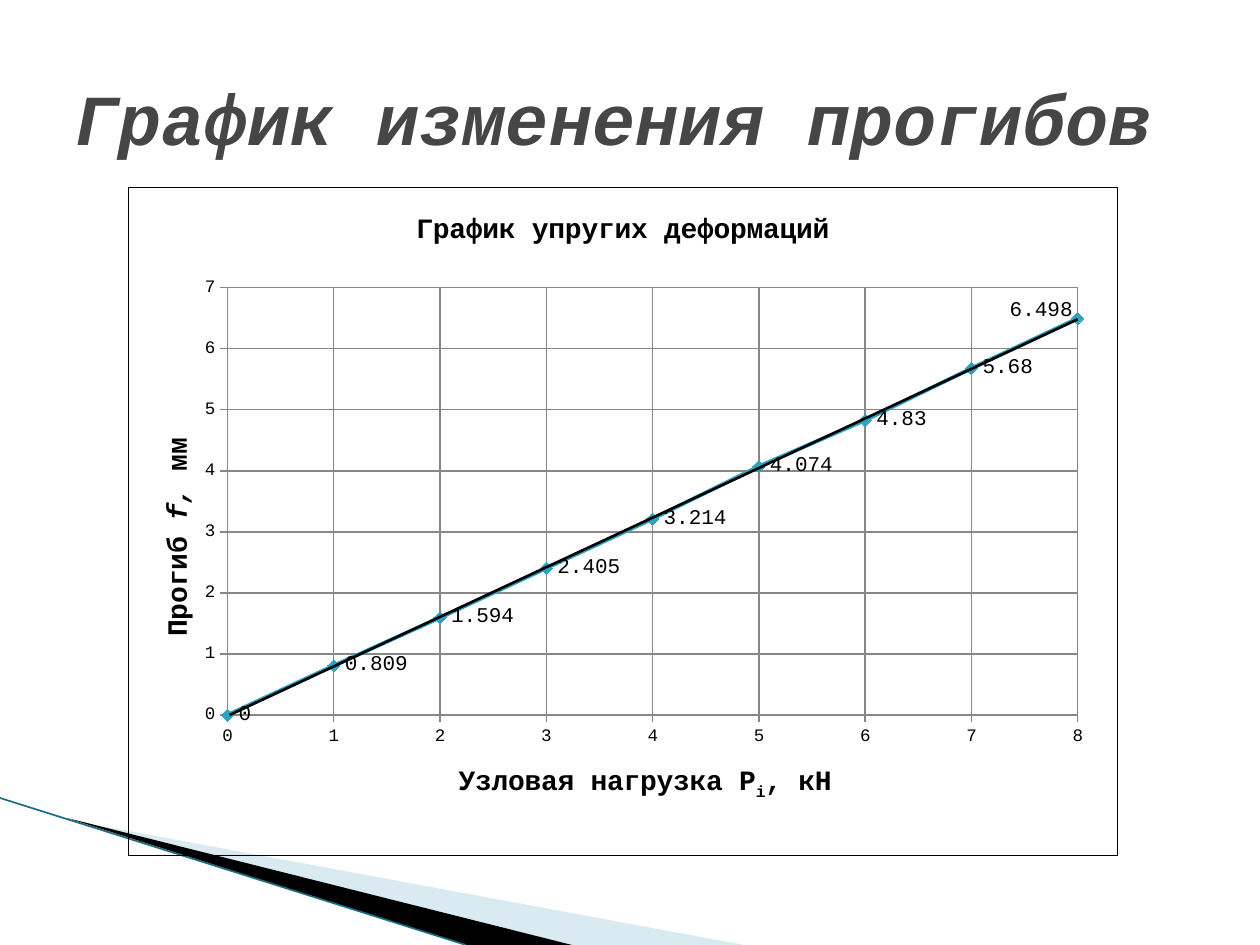
import pptx
import pptx.chart.data
import pptx.chart.datalabel
import pptx.dml.color
import pptx.enum.chart
import pptx.enum.text
import pptx.oxml
import pptx.oxml.ns
import pptx.util

PX = 914400 / 126
FONT = "Courier New"
DEFLECTIONS = [0, 0.809, 1.594, 2.405, 3.214, 4.074, 4.83, 5.68, 6.498]
qn = pptx.oxml.ns.qn


def px(n):
    return pptx.util.Emu(round(n * PX))


def rgb(code):
    return pptx.dml.color.RGBColor.from_string(code)


def xml(text):
    """Parse a chart element written with the c: and a: prefixes."""
    head, rest = text.split(">", 1)
    slash = "/" if head.endswith("/") else ""
    names = pptx.oxml.ns.nsdecls("c", "a")
    return pptx.oxml.parse_xml(f"{head.rstrip('/')} {names}{slash}>{rest}")


def layout(x, y, w=None, h=None, edge=True):
    parts = '<c:layoutTarget val="inner"/>' if w else ""
    if edge:
        parts += '<c:xMode val="edge"/><c:yMode val="edge"/>'
    for tag, value in zip("xywh", (x, y, w, h)):
        if value is not None:
            parts += f'<c:{tag} val="{value}"/>'
    return xml(f"<c:layout><c:manualLayout>{parts}</c:manualLayout></c:layout>")


def set_font(font, size, color="000000", bold=False, italic=False):
    font.name = FONT
    font.size = pptx.util.Pt(size)
    font.bold = bold
    font.italic = italic
    font.color.rgb = rgb(color)


def add_wedge(s, points, color, opacity=100):
    builder = s.shapes.build_freeform(*points[0], scale=PX)
    builder.add_line_segments(points[1:], close=True)
    sp = builder.convert_to_shape()
    sp.shadow.inherit = False
    sp.fill.solid()
    sp.fill.fore_color.rgb = rgb(color)
    sp.line.fill.background()
    if opacity < 100:
        clr = sp._element.spPr.find(".//" + qn("a:srgbClr"))
        clr.append(xml(f'<a:alpha val="{opacity * 1000}"/>'))


def add_corner(s, x, y, w, h):
    """Swoosh in the bottom left corner."""
    bottom = y + h
    add_wedge(s, [(x + 69, y + 22), (x + 744, bottom), (x + 572, bottom)],
              "A0CBDC", 40)
    add_wedge(s, [(x + 67, y + 20), (x + 572, bottom), (x + 466, bottom)],
              "000000")
    line = s.shapes.add_connector(1, px(x), px(y), px(x + w), px(bottom))
    line.line.color.rgb = rgb("1B6E82")
    line.line.width = pptx.util.Pt(0.95)
    line._element.spPr.append(xml("<a:effectLst/>"))


def add_title(s, x, y, w, h):
    sp = s.shapes.title
    sp.left, sp.top, sp.width, sp.height = map(px, (x, y, w, h))
    tf = sp.text_frame
    tf.text = "График изменения прогибов"
    tf.vertical_anchor = pptx.enum.text.MSO_ANCHOR.MIDDLE
    p = tf.paragraphs[0]
    p.alignment = pptx.enum.text.PP_ALIGN.LEFT
    set_font(p.runs[0].font, 41, "464646", True, True)


def fill_title(title, texts):
    """Write bold runs into a chart or axis title and return them."""
    p = title.text_frame.paragraphs[0]
    for text in texts:
        r = p.add_run()
        r.text = text
        set_font(r.font, 16, bold=True)
    return p.runs


def format_axis(axis, maximum, texts, title_at):
    axis.minimum_scale, axis.maximum_scale = 0, maximum
    axis.major_unit = 1
    axis.major_tick_mark = pptx.enum.chart.XL_TICK_MARK.CROSS
    axis.has_major_gridlines = True
    for line in (axis.format.line, axis.major_gridlines.format.line):
        line.color.rgb = rgb("878787")
        line.width = pptx.util.Pt(0.75)
    set_font(axis.tick_labels.font, 10)
    axis.tick_labels.number_format = "General"
    axis.tick_labels.number_format_is_linked = False
    runs = fill_title(axis.axis_title, texts)
    title = axis.axis_title._element
    for old in title.findall(qn("c:layout")):
        title.remove(old)
    title.find(qn("c:tx")).addnext(layout(*title_at))
    return runs


def format_series(plot):
    plot.vary_by_categories = False
    series = plot.series[0]
    series.smooth = False
    series.format.line.color.rgb = rgb("2DA2BF")
    series.format.line.width = pptx.util.Pt(2.25)
    marker = series.marker
    marker.style = pptx.enum.chart.XL_MARKER_STYLE.DIAMOND
    marker.size = 7
    marker.format.fill.solid()
    marker.format.fill.fore_color.rgb = rgb("2DA2BF")
    marker.format.line.color.rgb = rgb("2DA2BF")

    right = pptx.enum.chart.XL_LABEL_POSITION.RIGHT
    dlbls = series._element.get_or_add_dLbls()
    labels = pptx.chart.datalabel.DataLabels(dlbls)
    labels.show_value = True
    labels.position = right
    set_font(labels.font, 12)
    last = series.points[len(DEFLECTIONS) - 1].data_label
    last.position = right
    set_font(last.font, 12)
    dlbls.find(qn("c:dLbl")).find(qn("c:idx")).addnext(
        layout(-0.08, -0.01, edge=False))
    dlbls.addnext(xml(
        '<c:trendline><c:spPr><a:ln w="19050"><a:solidFill>'
        '<a:srgbClr val="000000"/></a:solidFill></a:ln></c:spPr>'
        '<c:trendlineType val="linear"/><c:dispRSqr val="0"/>'
        '<c:dispEq val="0"/></c:trendline>'))


def add_deflection_chart(s, x, y, w, h):
    data = pptx.chart.data.XyChartData()
    series = data.add_series("Series 1")
    for load, deflection in enumerate(DEFLECTIONS):
        series.add_data_point(load, deflection)
    kind = pptx.enum.chart.XL_CHART_TYPE.XY_SCATTER_LINES
    chart = s.shapes.add_chart(kind, *map(px, (x, y, w, h)), data).chart
    set_font(chart.font, 10)
    chart.has_legend = False
    chart.has_title = True
    fill_title(chart.chart_title, ["График упругих деформаций"])

    runs = format_axis(chart.category_axis, 8,
                       ["Узловая нагрузка P", "i", ", кН"], (0.33, 0.86))
    runs[1].font._element.set("baseline", "-25000")
    runs = format_axis(chart.value_axis, 7,
                       ["Прогиб ", "f, ", "мм"], (0.03, 0.37))
    runs[1].font.italic = True
    body = chart.value_axis.axis_title.text_frame._txBody.bodyPr
    body.set("rot", "-5400000")
    body.set("vert", "horz")
    format_series(chart.plots[0])

    area = chart._chartSpace.chart.plotArea
    for old in area.findall(qn("c:layout")):
        area.remove(old)
    area.insert(0, layout(0.1, 0.15, 0.86, 0.64))
    chart._chartSpace.chart.addnext(xml(
        '<c:spPr><a:noFill/><a:ln w="9525"><a:solidFill>'
        '<a:srgbClr val="000000"/></a:solidFill></a:ln></c:spPr>'))


def main():
    prs = pptx.Presentation()
    prs.slide_width, prs.slide_height = px(1260), px(945)
    s = prs.slides.add_slide(prs.slide_layouts[5])
    add_corner(s, 0, 798, 466, 147)
    add_title(s, 63, 38, 1158, 157)
    add_deflection_chart(s, 128, 187, 990, 669)
    prs.save("out.pptx")


if __name__ == "__main__":
    main()
